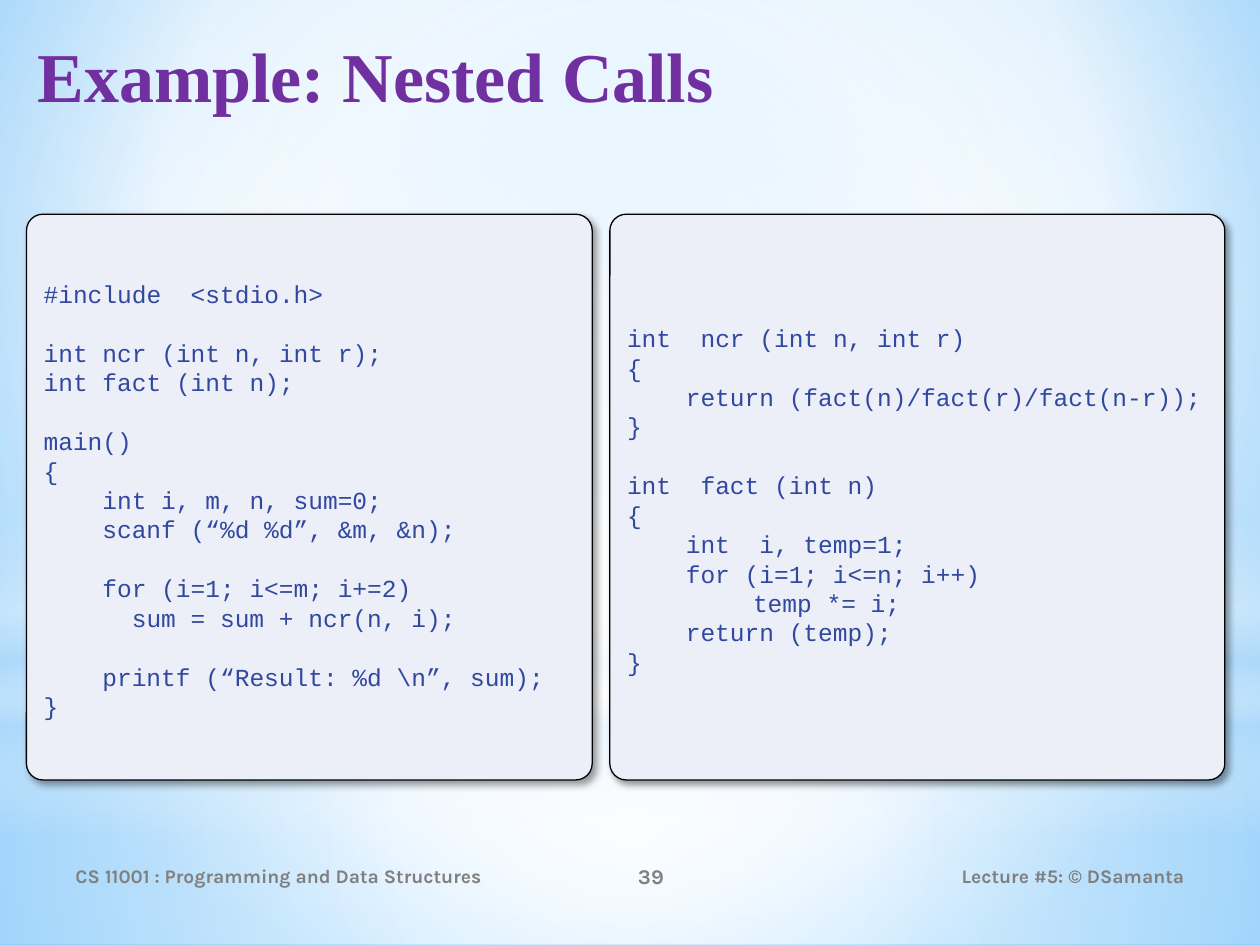
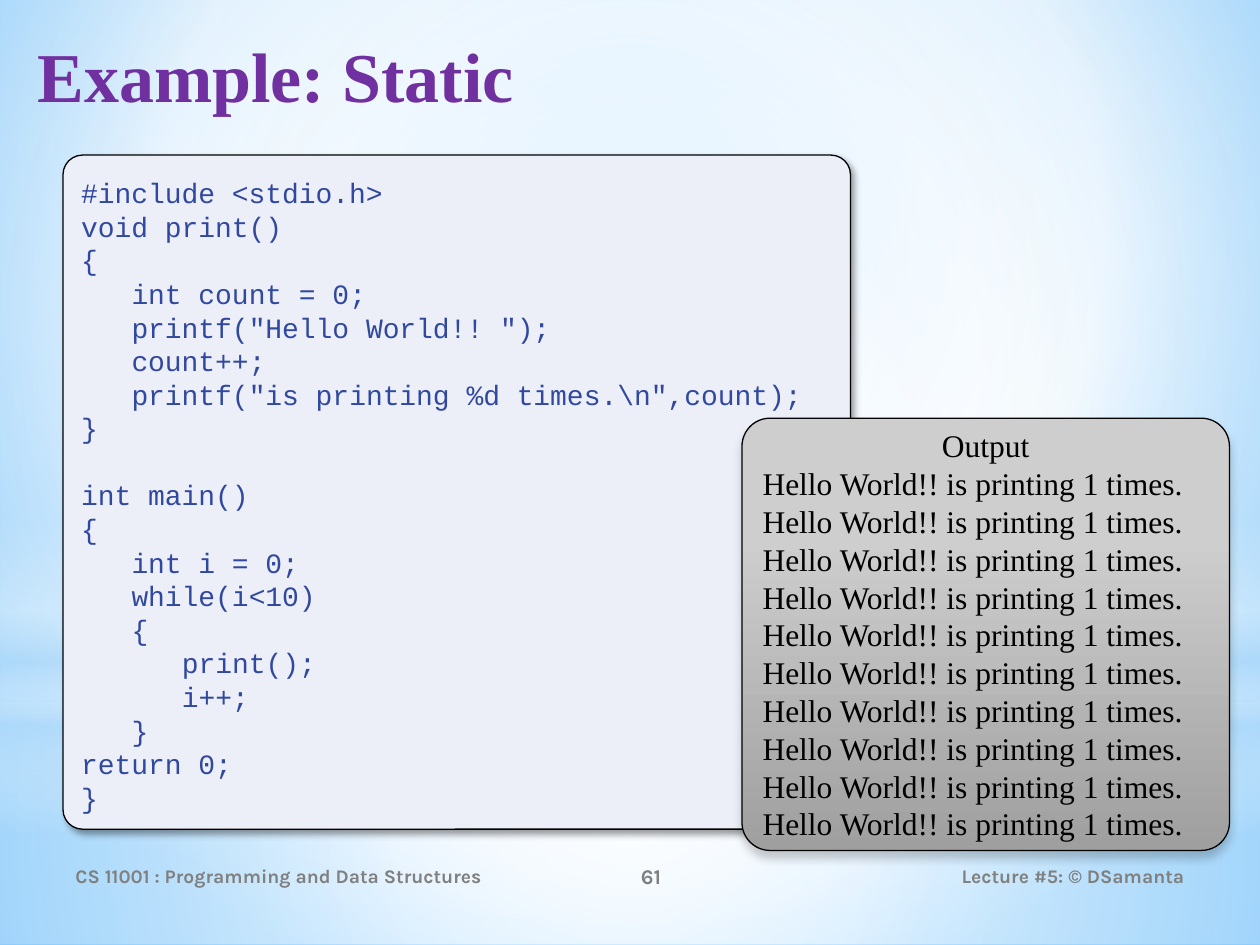
from lxml.etree import SubElement
from pptx import Presentation
from pptx.dml.color import RGBColor
from pptx.enum.shapes import MSO_SHAPE
from pptx.enum.text import MSO_ANCHOR, MSO_AUTO_SIZE, PP_ALIGN
from pptx.oxml.ns import qn
from pptx.util import Pt

COLORS = {
    "title": "7030A0", "footer": "808080", "code": "31489F", "panel": "ECEFF8",
    "black": "000000", "white": "FFFFFF", "haze": "B4DCFA", "sky": "9ED5FF",
    "deep_sky": "5BB9FF", "output_top": "CECECE", "output_bottom": "9F9F9F",
}
SERIF, MONO, SANS = "Times New Roman", "Courier New", "Karla"
MONO_ADVANCE = 0.6
LINE_HEIGHT = 1.2
TAB_WIDTH = 72
CENTER = (50, 50, 50, 50)
CODE_SHADOW = {"alpha": 40, "blur": 4, "distance": 3, "angle": 45}
OUTPUT_SHADOW = {"alpha": 20, "blur": 5, "distance": 4, "angle": 90}

MAIN_CODE = r"""#include  <stdio.h>

int ncr (int n, int r);
int fact (int n);

main()
{
    int i, m, n, sum=0;
    scanf (“%d %d”, &m, &n);

    for (i=1; i<=m; i+=2)
      sum = sum + ncr(n, i);

    printf (“Result: %d \n”, sum);
}"""

FUNCTIONS_CODE = """int  ncr (int n, int r)
{
    return (fact(n)/fact(r)/fact(n-r));
}

int  fact (int n)
{
    int  i, temp=1;
    for (i=1; i<=n; i++)
\ttemp *= i;
    return (temp);
}"""

STATIC_CODE = r"""#include <stdio.h>
void print()
{
   int count = 0;
   printf("Hello World!! ");
   count++;
   printf("is printing %d times.\n",count);
}

int main()
{
   int i = 0;
   while(i<10)
   {
      print();
      i++;
   }
return 0;
}"""

OUTPUT_TEXT = "\n".join(["Output"] + ["Hello World!! is printing 1 times."] * 10)


def rgb(name):
    """Return the named colour."""
    return RGBColor.from_string(COLORS[name])


def add_color(parent, name, alpha=100):
    """Append a colour element with its opacity in percent."""
    color = SubElement(parent, qn("a:srgbClr"), val=COLORS[name])
    if alpha < 100:
        SubElement(color, qn("a:alpha"), val=str(alpha * 1000))


def fill_gradient(fill, properties, stops, focus=None):
    """Fill with (position, colour, opacity) stops, downwards or round a focus."""
    fill.solid()
    solid = properties.find(qn("a:solidFill"))
    gradient = solid.makeelement(qn("a:gradFill"), {"rotWithShape": "1"})
    properties.replace(solid, gradient)
    stop_list = SubElement(gradient, qn("a:gsLst"))
    for position, name, alpha in stops:
        stop = SubElement(stop_list, qn("a:gs"), pos=str(position * 1000))
        add_color(stop, name, alpha)
    if focus:
        circle = SubElement(gradient, qn("a:path"), {"path": "circle"})
        sides = {side: str(value * 1000) for side, value in zip("ltrb", focus)}
        SubElement(circle, qn("a:fillToRect"), sides)
    else:
        SubElement(gradient, qn("a:lin"), ang="5400000", scaled="0")


def write_text(frame, text, size, font, color, bold=False, align=PP_ALIGN.LEFT,
               anchor=MSO_ANCHOR.MIDDLE, fixed_lines=True):
    """Write lines, turning blank lines into spacing and leading blanks into indents."""
    frame.word_wrap = True
    frame.auto_size = MSO_AUTO_SIZE.NONE
    frame.vertical_anchor = anchor
    frame.margin_left = frame.margin_right = Pt(7.2)
    frame.margin_top = frame.margin_bottom = Pt(3.6)
    line_height = size * LINE_HEIGHT
    paragraph, gap = frame.paragraphs[0], 0
    for index, line in enumerate(text.split("\n")):
        if not line:
            gap += line_height
            continue
        if index:
            paragraph = frame.add_paragraph()
        content = line.lstrip()
        lead = line[:len(line) - len(content)]
        indent = lead.count("\t") * TAB_WIDTH + lead.count(" ") * size * MONO_ADVANCE
        properties = paragraph._p.get_or_add_pPr()
        properties.set("marL", str(int(Pt(indent))))
        properties.set("indent", "0")
        paragraph.alignment = align
        paragraph.space_before, paragraph.space_after = Pt(gap), Pt(0)
        if fixed_lines:
            paragraph.line_spacing = Pt(line_height)
        run = paragraph.add_run()
        run.text = content
        run.font.size, run.font.name, run.font.bold = Pt(size), font, bold
        run.font.color.rgb = rgb(color)
        gap = 0


def add_plain_shape(slide, kind, box):
    """Add a shape without shadow at (left, top, width, height)."""
    shape = slide.shapes.add_shape(kind, *map(Pt, box))
    shape.shadow.inherit = False
    return shape


def add_backdrop(slide, box):
    """Layer the translucent bands and the central glow over the box."""
    left, top, width, height = box
    horizon = 402
    layers = [
        (MSO_SHAPE.RECTANGLE, horizon, height - horizon,
         [(0, "white", 91), (37, "white", 76), (100, "haze", 79)], CENTER),
        (MSO_SHAPE.RECTANGLE, 0, horizon,
         [(0, "white", 89), (48, "white", 62), (100, "haze", 79)], CENTER),
        (MSO_SHAPE.RECTANGLE, 297, 180,
         [(0, "white", 0), (29, "white", 30), (45, "haze", 40),
          (55, "white", 26), (65, "haze", 60), (100, "white", 0)], None),
        (MSO_SHAPE.OVAL, 126, 402, [(0, "white", 100), (56, "white", 0)], CENTER),
    ]
    for kind, offset, layer_height, stops, focus in layers:
        layer = add_plain_shape(slide, kind, (left, top + offset, width, layer_height))
        layer.line.fill.background()
        fill_gradient(layer.fill, layer._element.spPr, stops, focus)


def add_title(slide, text, box):
    """Place the title placeholder above the backdrop."""
    title = slide.shapes.title
    slide.shapes._spTree.append(title._element)
    title.left, title.top, title.width, title.height = map(Pt, box)
    write_text(title.text_frame, text, 40, SERIF, "title", bold=True,
               anchor=MSO_ANCHOR.TOP)


def add_footer(slide, number, box):
    """Write course, slide number and lecture along the box."""
    left, top, width, height = box
    parts = [
        ("CS 11001 : Programming and Data Structures", 0, 264, 11, PP_ALIGN.LEFT),
        (str(number), 264, 144, 12, PP_ALIGN.CENTER),
        ("Lecture #5: © DSamanta", width - 198, 198, 11, PP_ALIGN.RIGHT),
    ]
    for text, offset, part_width, size, align in parts:
        text_box = slide.shapes.add_textbox(
            Pt(left + offset), Pt(top), Pt(part_width), Pt(height))
        write_text(text_box.text_frame, text, size, SANS, "footer", bold=True,
                   align=align, fixed_lines=False)


def add_panel(slide, box, rounding, shadow):
    """Add a rounded, outlined panel with a soft shadow."""
    panel = add_plain_shape(slide, MSO_SHAPE.ROUNDED_RECTANGLE, box)
    panel.adjustments[0] = rounding
    panel.line.color.rgb = rgb("black")
    panel.line.width = Pt(0.75)
    effects = panel._element.spPr.find(qn("a:effectLst"))
    outer = SubElement(effects, qn("a:outerShdw"), {
        "blurRad": str(int(Pt(shadow["blur"]))),
        "dist": str(int(Pt(shadow["distance"]))),
        "dir": str(shadow["angle"] * 60000),
        "algn": "tl", "rotWithShape": "0"})
    add_color(outer, "black", shadow["alpha"])
    return panel


def add_code(slide, code, box, size):
    """Add a pale panel that holds a code listing."""
    panel = add_panel(slide, box, 0.029, CODE_SHADOW)
    panel.fill.solid()
    panel.fill.fore_color.rgb = rgb("panel")
    write_text(panel.text_frame, code, size, MONO, "code")
    panel.text_frame.margin_top = Pt(6.6)


def add_output(slide, text, box):
    """Add a grey panel with a centred heading over the printed lines."""
    panel = add_panel(slide, box, 0.065, OUTPUT_SHADOW)
    fill_gradient(panel.fill, panel._element.spPr,
                  [(28, "output_top", 100), (100, "output_bottom", 100)])
    write_text(panel.text_frame, text, 18, SERIF, "black")
    panel.text_frame.paragraphs[0].alignment = PP_ALIGN.CENTER


def add_lecture_slide(presentation, title, number):
    """Add a slide with the shared backdrop, title and footer."""
    slide = presentation.slides.add_slide(presentation.slide_layouts[5])
    add_backdrop(slide, (0, 0, 720, 540))
    add_title(slide, title, (14.4, 15.1, 686.2, 90))
    add_footer(slide, number, (36, 486, 648, 28.8))
    return slide


def add_nested_calls_slide(presentation):
    """Show the main program beside the functions it calls."""
    slide = add_lecture_slide(presentation, "Example: Nested Calls", 39)
    add_code(slide, MAIN_CODE, (15.1, 122.4, 323.3, 323.3), 14)
    add_code(slide, FUNCTIONS_CODE, (348.5, 122.4, 351.4, 323.3), 14)


def add_static_slide(presentation):
    """Show the counting program with its output in front."""
    slide = add_lecture_slide(presentation, "Example: Static", 61)
    add_code(slide, STATIC_CODE, (36, 88.6, 450, 385.2), 16)
    add_output(slide, OUTPUT_TEXT, (424, 239, 278.6, 247))


def main():
    """Build and save the presentation."""
    presentation = Presentation()
    presentation.slide_width, presentation.slide_height = Pt(720), Pt(540)
    master = presentation.slide_master
    fill = master.background.fill
    fill_gradient(fill, master._element.cSld.bg.bgPr,
                  [(0, "sky", 100), (60, "white", 100), (100, "deep_sky", 100)],
                  (20, 10, 20, 60))
    add_nested_calls_slide(presentation)
    add_static_slide(presentation)
    presentation.save("out.pptx")


if __name__ == "__main__":
    main()
